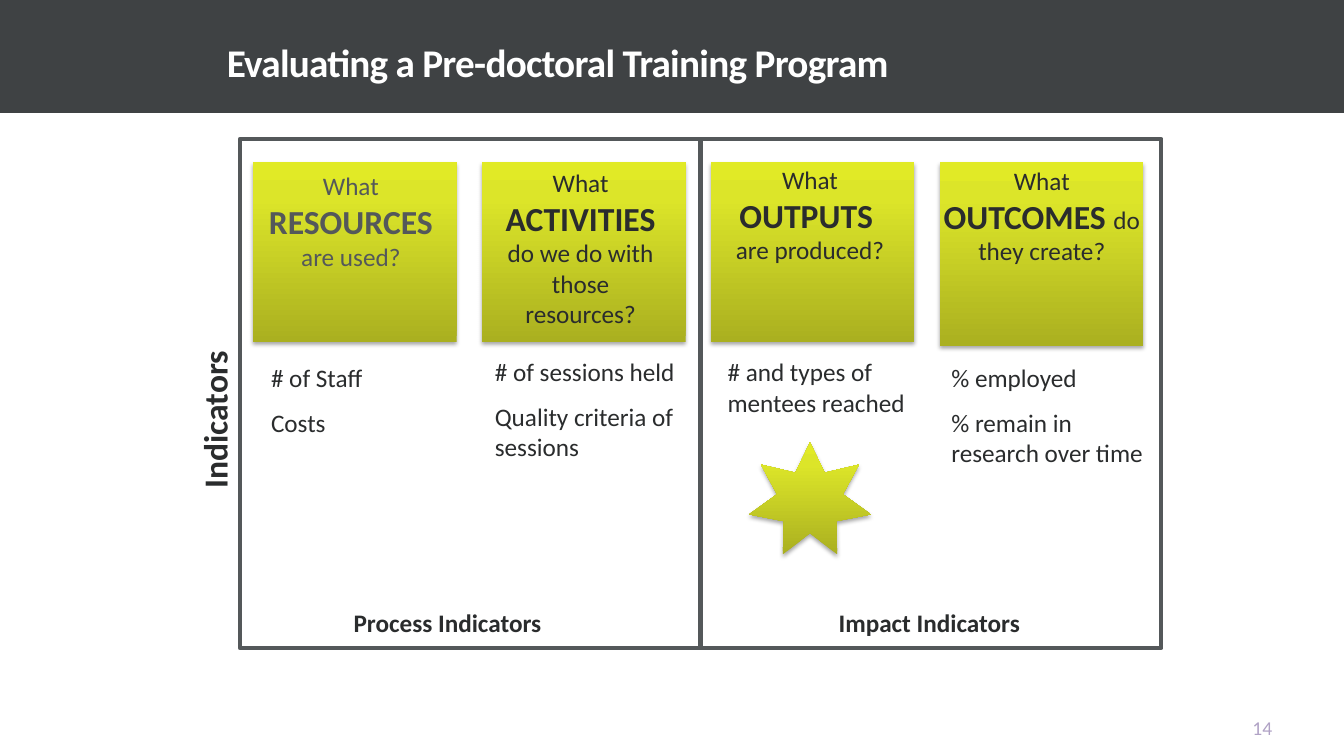
from dataclasses import dataclass

from lxml import etree
from pptx import Presentation
from pptx.dml.color import RGBColor
from pptx.enum.shapes import MSO_SHAPE as Shape
from pptx.enum.text import MSO_ANCHOR as Anchor, PP_ALIGN as Align
from pptx.oxml.ns import nsdecls
from pptx.util import Inches, Pt


@dataclass(frozen=True)
class Theme:
    font: str = "Calibri"
    ink: str = "2A2C2D"
    gray: str = "54585A"
    header: str = "3F4244"
    white: str = "FFFFFF"
    number: str = "B0A2C5"
    lime: tuple = ((0, "AAB020"), (80, "DCE529"), (100, "E1EA26"))
    title_size: int = 28
    strong_size: int = 24
    body_size: int = 18
    number_size: int = 14
    indicator_gap: int = 10
    border: int = 3


def format_text(p, text, font, color, size, bold=False, spacing=None):
    r = p.add_run()
    r.text = text
    r.font.name = font
    r.font.size = Pt(size)
    r.font.bold = bold
    r.font.color.rgb = RGBColor.from_string(color)
    if spacing is not None:
        r.font._element.set("spc", str(round(spacing * 100)))


class SlideBuilder:
    """Draws on one slide; boxes are (left, top, width, height) in percent of the slide."""

    def __init__(self, prs, theme):
        self.theme = theme
        self.size = (prs.slide_width, prs.slide_height) * 2
        self.slide = prs.slides.add_slide(prs.slide_layouts[6])

    def place(self, box):
        return [round(share * side / 100) for share, side in zip(box, self.size)]

    def shape(self, kind, box, fill=None, line=None):
        sp = self.slide.shapes.add_shape(kind, *self.place(box))
        sp.shadow.inherit = False
        if fill:
            sp.fill.solid()
            sp.fill.fore_color.rgb = RGBColor.from_string(fill)
        else:
            sp.fill.background()
        if line:
            sp.line.color.rgb = RGBColor.from_string(line)
            sp.line.width = Pt(self.theme.border)
        else:
            sp.line.fill.background()
        return sp

    def lime_shape(self, kind, box):
        """Adds a shape with the lime gradient and a soft shadow below it."""
        sp = self.shape(kind, box)
        props = sp._element.spPr
        stops = "".join(f'<a:gs pos="{pos * 1000}"><a:srgbClr val="{color}"/></a:gs>'
                        for pos, color in self.theme.lime)
        gradient = etree.fromstring(
            f'<a:gradFill {nsdecls("a")} rotWithShape="1"><a:gsLst>{stops}</a:gsLst>'
            '<a:lin ang="16200000" scaled="0"/></a:gradFill>')
        props.replace(props.find("{*}noFill"), gradient)
        shadow = etree.fromstring(
            f'<a:outerShdw {nsdecls("a")} blurRad="{Pt(3.1)}" dist="{Pt(1.8)}" '
            'dir="5400000" rotWithShape="0"><a:srgbClr val="000000">'
            '<a:alpha val="35000"/></a:srgbClr></a:outerShdw>')
        props.find("{*}effectLst").append(shadow)
        return sp

    def text(self, box, paragraphs, align=Align.LEFT, color=None, size=None, gap=0,
             anchor=Anchor.TOP, margins=(0.1, 0.05, 0.1, 0.05), rotation=0,
             line_spacing=None, **style):
        """Each paragraph is a list of (text, format overrides) runs."""
        sp = self.slide.shapes.add_textbox(*self.place(box))
        sp.rotation = rotation
        tf = sp.text_frame
        tf.word_wrap = True
        tf.vertical_anchor = anchor
        tf.margin_left, tf.margin_top, tf.margin_right, tf.margin_bottom = map(Inches, margins)
        base = dict(font=self.theme.font, color=color or self.theme.ink,
                    size=size or self.theme.body_size) | style
        for i, runs in enumerate(paragraphs):
            p = tf.add_paragraph() if i else tf.paragraphs[0]
            p.alignment = align
            if i and gap:
                p.space_before = Pt(gap)
            if line_spacing:
                p.line_spacing = line_spacing
            for words, changes in runs:
                format_text(p, words, **(base | changes))

    def label(self, box, words, **options):
        self.text(box, [[(words, {})]], **options)

    def indicators(self, box, lines):
        self.text(box, [[(line, {})] for line in lines], gap=self.theme.indicator_gap)


def main():
    theme = Theme()
    prs = Presentation()
    prs.slide_width, prs.slide_height = Inches(13.333), Inches(7.5)
    s = SlideBuilder(prs, theme)
    strong = dict(size=theme.strong_size, bold=True)

    s.shape(Shape.RECTANGLE, (0, 0, 100, 14.93), fill=theme.header)
    s.label((16.88, 2, 64.65, 10), "Evaluating a Pre-doctoral Training Program",
            color=theme.white, size=theme.title_size, bold=True, spacing=-0.5,
            anchor=Anchor.BOTTOM, margins=(0, 0, 0.1, 0.05), line_spacing=0.85)

    # question, its (left, top, width), colour, card height, indicator (left, top), indicators
    what = ("What ", {})
    columns = [
        ([[what, ("RESOURCES", strong)], [("are used?", {})]],
         (18.83, 21.87, 14.55), theme.gray, 23.73,
         (19.43, 47.33), ["# of Staff", "Costs"]),
        ([[what, ("ACTIVITIES ", strong), ("do we do with those resources?", {})]],
         (36.6, 21.47, 13.2), theme.ink, 23.73,
         (36.08, 46.53), ["# of sessions held", "Quality criteria of sessions"]),
        ([[what, ("OUTPUTS ", strong)], [("are produced?", {})]],
         (53.03, 21.07, 14.48), theme.ink, 23.73,
         (53.4, 46.53), ["# and types of mentees reached"]),
        ([[what, ("OUTCOMES ", strong), ("do they create?", {})]],
         (69.45, 21.2, 16.13), theme.ink, 24.27,
         (70.05, 47.33), ["% employed", "% remain in research over time"]),
    ]
    for i, (question, spot, color, height, corner, lines) in enumerate(columns):
        s.lime_shape(Shape.RECTANGLE, (18.83 + 17.03 * i, 21.47, 15.15, height))
        s.text((*spot, 22.93), question, align=Align.CENTER, color=color)
        s.indicators((*corner, 15.98, 15), lines)

    panel_width = 34.28
    for i, (caption, left) in enumerate([("Process Indicators", 16.95),
                                         ("Impact Indicators", 52.8)]):
        s.shape(Shape.RECTANGLE, (17.85 + panel_width * i, 18.4, panel_width, 67.33),
                line=theme.gray)
        s.label((left, 79.73, 32.7, 5.33), caption, align=Align.CENTER, bold=True)

    s.label((7.2, 47.07, 17.48, 6.67), "Indicators", rotation=270, **strong)
    star = s.lime_shape(Shape.STAR_7_POINT, (55.73, 58.53, 9.08, 14.8))
    star.adjustments[0] = 0.27
    s.label((90.83, 94.53, 3.83, 3.33), "14", align=Align.RIGHT, color=theme.number,
            size=theme.number_size, anchor=Anchor.BOTTOM, margins=(0, 0, 0, 0))

    prs.save("out.pptx")


if __name__ == "__main__":
    main()
